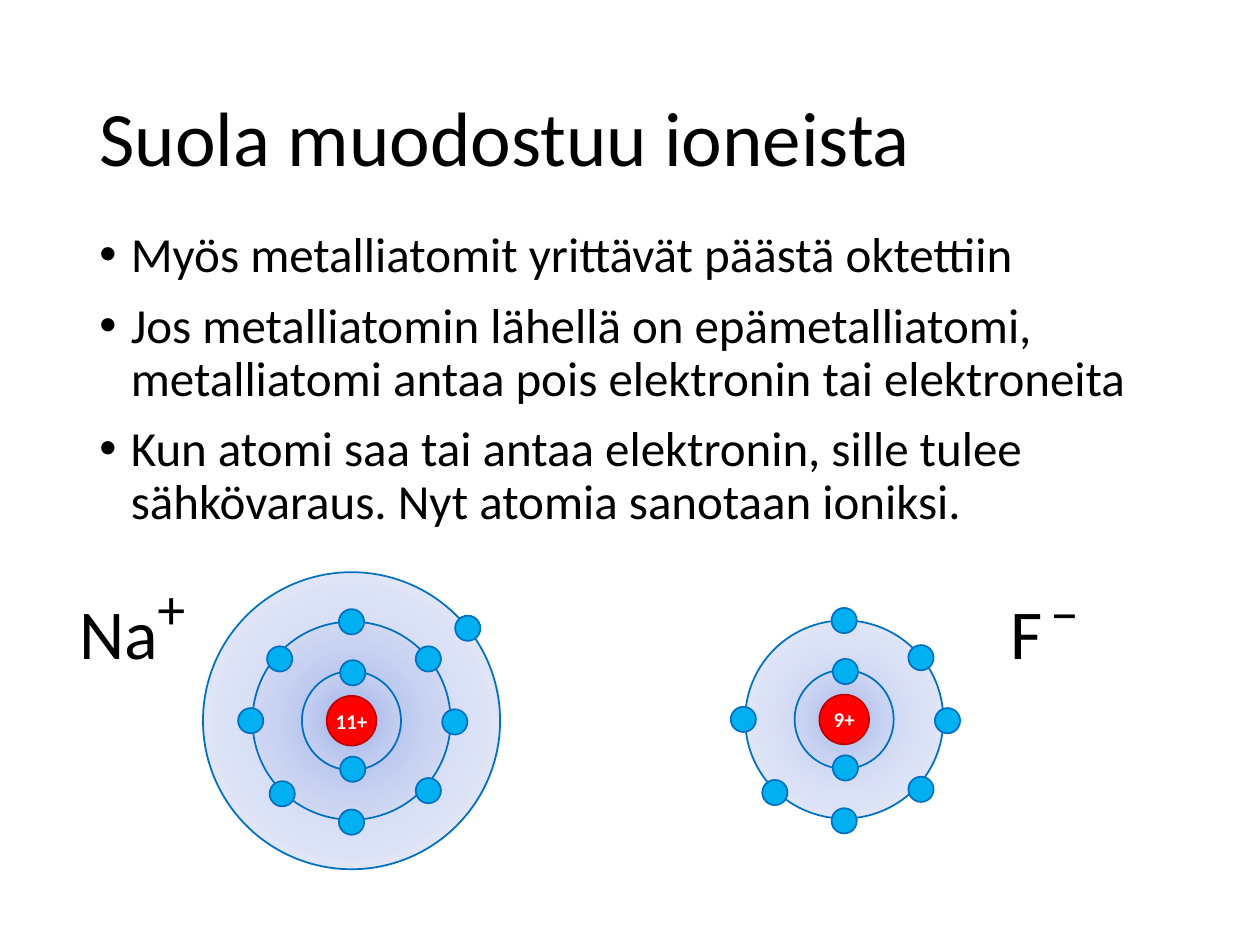
import math

import lxml.etree
import pptx
import pptx.dml.color
import pptx.enum.shapes
import pptx.enum.text
import pptx.oxml
import pptx.oxml.ns
import pptx.util

CELL = pptx.util.Inches(0.1)
COLUMNS, ROWS = 100, 75
FONT = "Calibri"
SHELL_STOPS = ((0, "96ABEA"), (50, "C0CBF0"), (100, "E0E5F7"))
SHELL_RADIUS = 3.93
NUCLEUS_RADIUS = 1.97
ELECTRON_RADIUS = 1
INNER_ELECTRONS = [(0.1, -3.8), (0.1, 3.85)]
OUTER_ELECTRONS = [(0, -7.85), (6.1, -4.9), (8.2, 0.1), (6.1, 5.55),
                   (0, 8.05), (-8, 0), (-5.5, 5.8)]
EIGHTH_ELECTRON = (-5.7, -4.9)
BULLETS = [
    "Myös metalliatomit yrittävät päästä oktettiin",
    "Jos metalliatomin lähellä on epämetalliatomi, "
    "metalliatomi antaa pois elektronin tai elektroneita",
    "Kun atomi saa tai antaa elektronin, sille tulee "
    "sähkövaraus. Nyt atomia sanotaan ioniksi.",
]


def grid(cells):
    return round(cells * CELL)


def color(hex_string):
    return pptx.dml.color.RGBColor.from_string(hex_string)


def add_bullet(paragraph):
    properties = paragraph._p.get_or_add_pPr()
    properties.set("marL", str(grid(2.5)))
    properties.set("indent", str(grid(-2.5)))
    for tag, name, value in (("a:buFont", "typeface", "Arial"),
                             ("a:buChar", "char", "•")):
        element = lxml.etree.SubElement(properties, pptx.oxml.ns.qn(tag))
        element.set(name, value)


def write_text(frame, text, size, fill="000000", bold=False, align=None,
               spacing=None, before=0, bullet=False):
    for index, line in enumerate(text.split("\n")):
        paragraph = frame.add_paragraph() if index else frame.paragraphs[0]
        if bullet:
            add_bullet(paragraph)
        paragraph.alignment = align
        paragraph.line_spacing = spacing
        paragraph.space_before = pptx.util.Pt(before if index else 0)
        run = paragraph.add_run()
        run.text = line
        run.font.name = FONT
        run.font.size = pptx.util.Pt(size)
        run.font.bold = bold
        run.font.color.rgb = color(fill)


def add_text(slide, text, box, size, wrap=True, middle=False, **text_format):
    frame = slide.shapes.add_textbox(*map(grid, box)).text_frame
    frame.word_wrap = wrap
    if middle:
        frame.vertical_anchor = pptx.enum.text.MSO_ANCHOR.MIDDLE
    write_text(frame, text, size, **text_format)


def add_circle(slide, center, radius, fill=None, line="0070C0"):
    left, top = (position - radius for position in center)
    shape = slide.shapes.add_shape(
        pptx.enum.shapes.MSO_SHAPE.OVAL,
        *map(grid, (left, top, 2 * radius, 2 * radius)))
    shape.shadow.inherit = False
    shape.line.color.rgb = color(line)
    shape.line.width = pptx.util.Pt(1)
    if fill:
        shape.fill.solid()
        shape.fill.fore_color.rgb = color(fill)
    return shape


def add_shell(slide, center, level):
    shape = add_circle(slide, center, level * SHELL_RADIUS)
    shape.fill.gradient()
    gradient = shape._element.spPr.find(pptx.oxml.ns.qn("a:gradFill"))
    stops = "".join(
        f'<a:gs pos="{position * 1000}"><a:srgbClr val="{value}">'
        '<a:alpha val="60000"/></a:srgbClr></a:gs>'
        for position, value in SHELL_STOPS)
    radial = pptx.oxml.parse_xml(
        f'<a:gradFill {pptx.oxml.ns.nsdecls("a")} rotWithShape="1">'
        f'<a:gsLst>{stops}</a:gsLst><a:path path="circle">'
        '<a:fillToRect l="50000" t="50000" r="50000" b="50000"/>'
        '</a:path></a:gradFill>')
    gradient.getparent().replace(gradient, radial)


def add_nucleus(slide, center, charge):
    shape = add_circle(slide, center, NUCLEUS_RADIUS, "FF0000", "C00000")
    frame = shape.text_frame
    frame.margin_left = frame.margin_right = 0
    frame.margin_top = frame.margin_bottom = 0
    frame.vertical_anchor = pptx.enum.text.MSO_ANCHOR.MIDDLE
    write_text(frame, charge, 12, fill="FFFFFF", bold=True,
               align=pptx.enum.text.PP_ALIGN.CENTER)


def add_atom(slide, center, charge, shells, electrons):
    for level in range(shells, 0, -1):
        add_shell(slide, center, level)
    add_nucleus(slide, center, charge)
    for across, down in electrons:
        position = (center[0] + across, center[1] + down)
        add_circle(slide, position, ELECTRON_RADIUS, "00B0F0")


def main():
    presentation = pptx.Presentation()
    presentation.slide_width = grid(COLUMNS)
    presentation.slide_height = grid(ROWS)
    slide = presentation.slides.add_slide(presentation.slide_layouts[6])

    add_text(slide, "Suola muodostuu ioneista", (6.9, 4, 86.2, 14.5), 44,
             middle=True, spacing=0.9)
    add_text(slide, "\n".join(BULLETS), (6.9, 17.8, 86.2, 25.5), 28,
             spacing=0.9, before=10, bullet=True)

    angle = math.radians(-38.5)
    valence_electron = (3 * SHELL_RADIUS * math.cos(angle),
                        3 * SHELL_RADIUS * math.sin(angle))
    fluorine_electrons = INNER_ELECTRONS + OUTER_ELECTRONS
    sodium_electrons = fluorine_electrons + [EIGHTH_ELECTRON, valence_electron]
    add_atom(slide, (27.9, 57.2), "11+", 3, sodium_electrons)
    add_atom(slide, (67, 57.1), "9+", 2, fluorine_electrons)

    add_text(slide, "−", (82.4, 45.4, 4.3, 6.4), 32, wrap=False)
    add_text(slide, "+", (11.5, 45, 4.3, 6.4), 32, wrap=False)
    add_text(slide, "Na", (5.3, 46.3, 8.3, 7.7), 40, wrap=False)
    add_text(slide, "F", (79.2, 46.3, 3.2, 7.7), 40)

    presentation.save("out.pptx")


if __name__ == "__main__":
    main()
